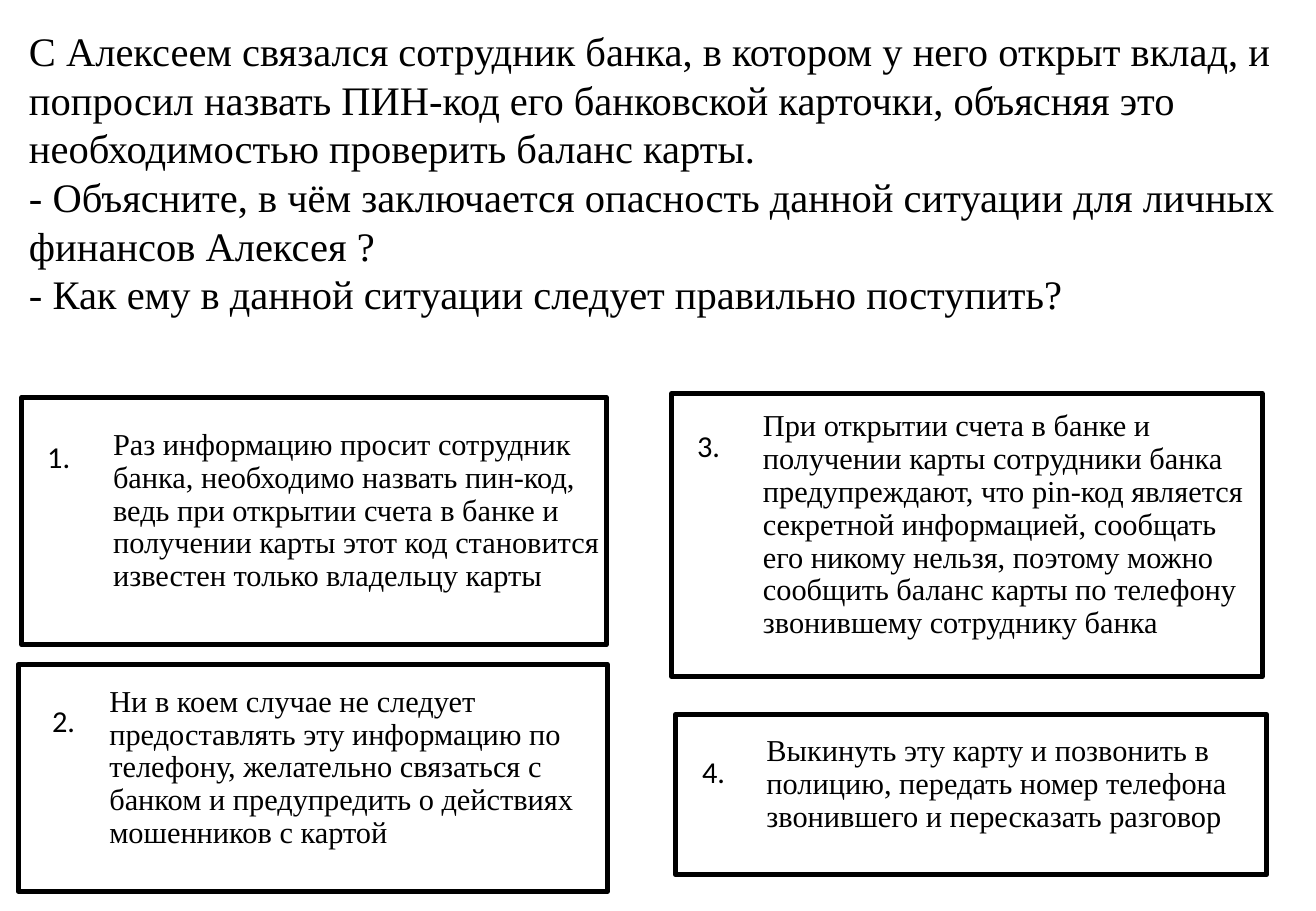
from pptx import Presentation
from pptx.dml.color import RGBColor
from pptx.enum.shapes import MSO_SHAPE
from pptx.enum.text import MSO_ANCHOR, PP_ALIGN
from pptx.util import Pt


def color(hex_string):
    return RGBColor.from_string(hex_string)


def style(paragraph, font_name, size):
    paragraph.alignment = PP_ALIGN.LEFT
    paragraph.font.name = font_name
    paragraph.font.size = Pt(size)
    paragraph.font.color.rgb = color("000000")


SERIF = "Times New Roman"
SITUATION = [
    "С Алексеем связался сотрудник банка, в котором у него открыт вклад, и попросил "
    "назвать ПИН-код его банковской карточки, объясняя это необходимостью проверить "
    "баланс карты.",
    "- Объясните, в чём заключается опасность данной ситуации для личных финансов "
    "Алексея ?",
    "- Как ему в данной ситуации следует правильно поступить?",
]
# Answer box (left, top, width, height), number box (left, top, width), answer text
ANSWERS = [
    ((13, 235.4, 346.3, 146.9), (20.9, 256.3, 36.7),
     "Раз информацию просит сотрудник банка, необходимо назвать пин-код, ведь при "
     "открытии счета в банке и получении карты этот код становится известен только "
     "владельцу карты"),
    ((10.8, 393.8, 349.2, 134.6), (23.8, 412.6, 31),
     "Ни в коем случае не следует предоставлять эту информацию по телефону, "
     "желательно связаться с банком и предупредить о действиях мошенников с картой"),
    ((398.2, 233.3, 349.9, 167.8), (406.1, 249.8, 35.3),
     "При открытии счета в банке и получении карты сотрудники банка предупреждают, "
     "что pin-код является секретной информацией, сообщать его никому нельзя, поэтому "
     "можно сообщить баланс карты по телефону звонившему сотруднику банка"),
    ((400.3, 423.4, 350.6, 95), (409, 442.8, 37.4),
     "Выкинуть эту карту и позвонить в полицию, передать номер телефона звонившего "
     "и пересказать разговор"),
]

prs = Presentation()
prs.slide_width, prs.slide_height = Pt(780), Pt(540)
slide = prs.slides.add_slide(prs.slide_layouts[6])

situation = slide.shapes.add_textbox(Pt(10.1), Pt(10.1), Pt(757.4), Pt(213.1))
situation.fill.solid()
situation.fill.fore_color.rgb = color("FFFFFF")
frame = situation.text_frame
frame.word_wrap = True
frame.margin_top = Pt(5.5)
frame.text = "\n".join(SITUATION)
for paragraph in frame.paragraphs:
    style(paragraph, SERIF, 24)

for number, (answer_box, number_box, text) in enumerate(ANSWERS, start=1):
    answer = slide.shapes.add_shape(MSO_SHAPE.RECTANGLE, *map(Pt, answer_box))
    answer.shadow.inherit = False
    answer.fill.solid()
    answer.fill.fore_color.rgb = color("FFFFFF")
    answer.line.color.rgb = color("000000")
    answer.line.width = Pt(3)
    frame = answer.text_frame
    frame.word_wrap = True
    frame.vertical_anchor = MSO_ANCHOR.MIDDLE
    frame.margin_left, frame.margin_bottom = Pt(54), Pt(11.5)
    frame.margin_top = frame.margin_right = 0
    frame.text = text
    frame.paragraphs[0].line_spacing = 0.9
    style(frame.paragraphs[0], SERIF, 18)

    label = slide.shapes.add_textbox(*map(Pt, number_box), Pt(29))
    label.text_frame.word_wrap = True
    label.text_frame.text = f"{number}."
    style(label.text_frame.paragraphs[0], "Calibri", 18)

prs.save("out.pptx")
